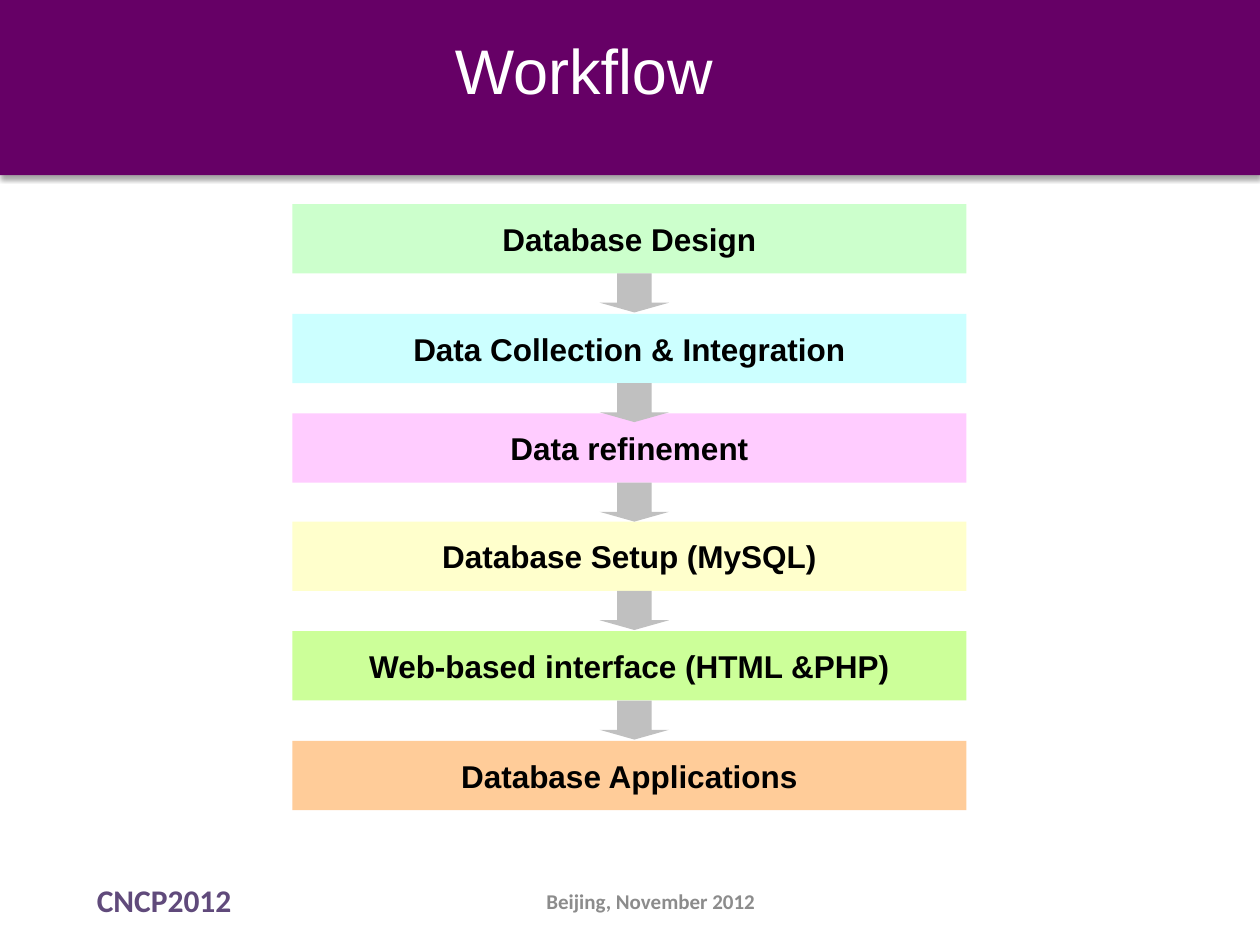
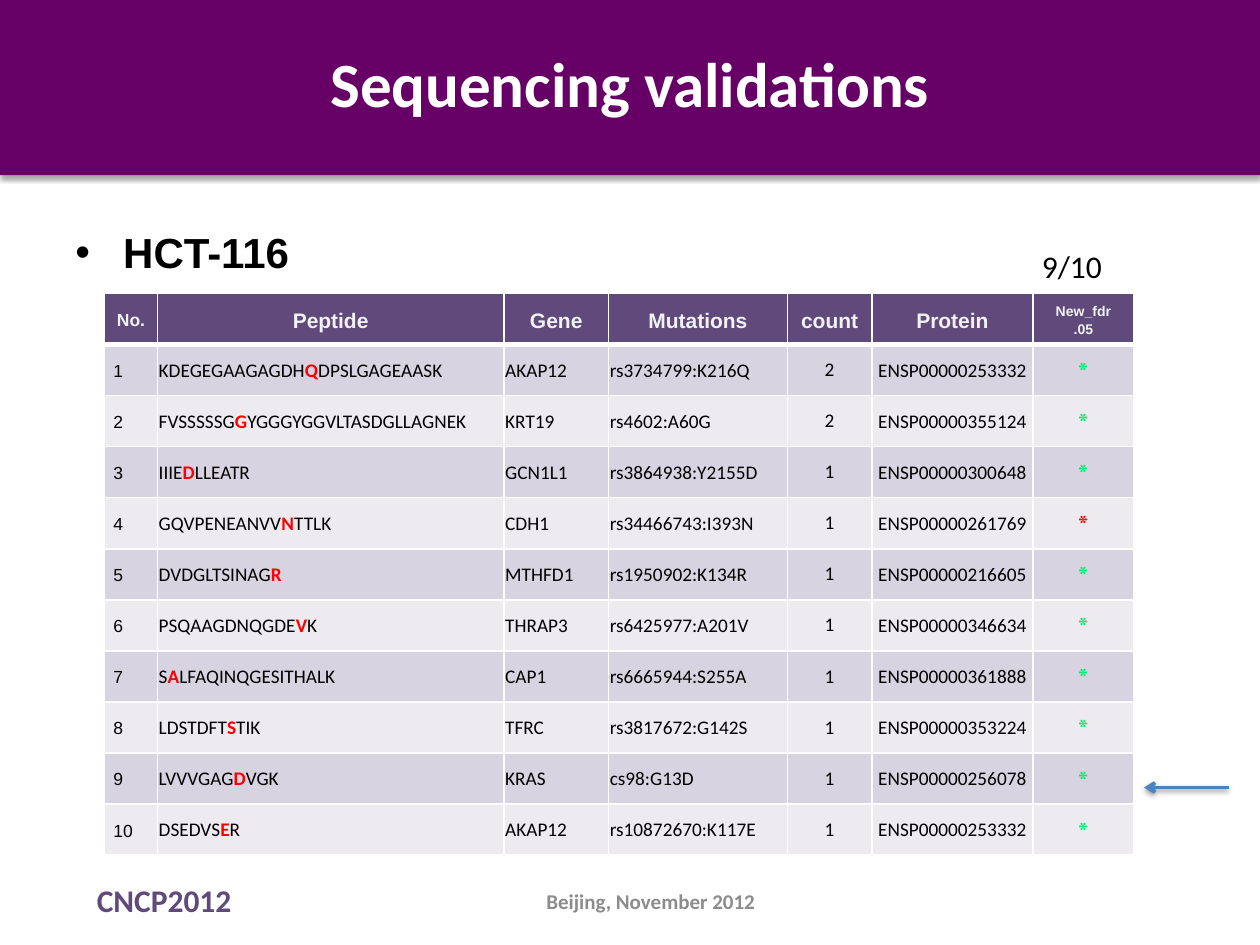
from dataclasses import dataclass

from lxml import etree
from pptx import Presentation
from pptx import util as u
from pptx.dml import color
from pptx.enum import shapes, text
from pptx.oxml import ns

TITLE_ONLY = 5
LEFT, CENTER = text.PP_ALIGN.LEFT, text.PP_ALIGN.CENTER
TOP, MIDDLE = text.MSO_ANCHOR.TOP, text.MSO_ANCHOR.MIDDLE


@dataclass(frozen=True)
class Theme:
    # Colours
    band: str = "660066"
    accent: str = "604A7B"
    white: str = "FFFFFF"
    black: str = "000000"
    muted: str = "8C8C8C"
    arrow: str = "C0C0C0"
    pointer: str = "4F81BD"
    header_text: str = "F2F2F2"
    row_fills: tuple = ("D8D3E0", "EDEAF0")
    step_fills: tuple = ("CCFFCC", "CCFFFF", "FFCCFF", "FFFFCC", "CCFF99", "FFCC99")
    mutated: str = "FF0000"
    passed: str = "00EA6A"
    # Fonts
    sans: str = "Arial"
    body: str = "Calibri"
    mark: str = "Cambria"
    # Type sizes
    title_size: int = 36
    bullet_size: int = 24
    label_size: int = 18
    mark_size: int = 16
    head_size: int = 12
    cell_size: int = 11
    number_size: int = 10
    small_size: int = 8


@dataclass(frozen=True)
class Type:
    """How one paragraph looks."""
    size: int
    font: str
    color: str = Theme.black
    bold: bool = False
    align: int = LEFT
    spacing: float = 1.0


def rgb(value):
    return color.RGBColor.from_string(value)


def add_xml(parent, tag, **attrs):
    return etree.SubElement(parent, ns.qn(tag), {k: str(v) for k, v in attrs.items()})


def set_shadow(sp, distance=0, alpha=0):
    """Give a shape a soft downward shadow, or none when alpha is 0."""
    spPr = sp._element.spPr
    effects = spPr.find(ns.qn("a:effectLst"))
    if effects is None:
        effects = add_xml(spPr, "a:effectLst")
    if alpha:
        shadow = add_xml(effects, "a:outerShdw", blurRad=u.Pt(3.1), dist=u.Pt(distance),
                         dir=90 * 60000, algn="ctr", rotWithShape=0)
        clr = add_xml(shadow, "a:srgbClr", val=Theme.black)
        add_xml(clr, "a:alpha", val=alpha * 1000)


class Deck:
    def __init__(self, theme):
        self.t = theme
        self.prs = Presentation()
        self.prs.slide_width, self.prs.slide_height = u.Inches(10), u.Inches(7.5)
        self.s = None

    def slide(self, title, box, style):
        """Start a slide with its band, title and footers."""
        t = self.t
        self.s = self.prs.slides.add_slide(self.prs.slide_layouts[TITLE_ONLY])
        sp = self.s.shapes.title
        sp.left, sp.top, sp.width, sp.height = map(u.Inches, box)
        self.put_text(sp.text_frame, [title], style)
        band = self.shape(shapes.MSO_SHAPE.RECTANGLE, (0, 0, 10, 1.39), t.band)
        set_shadow(band, 1.8, 35)
        sp._element.addprevious(band._element)
        self.label("CNCP2012", (0.67, 6.94, 2.33, 0.4),
                   Type(t.label_size, t.body, t.accent, True))
        self.label("Beijing, November 2012", (3.58, 6.95, 3.17, 0.4),
                   Type(t.head_size, t.body, t.muted, True, CENTER), MIDDLE)

    def put_text(self, tf, lines, style, anchor=TOP, wrap=True):
        """Fill a text frame; a part between bars shows as a mutated residue."""
        tf.word_wrap, tf.vertical_anchor = wrap, anchor
        for i, line in enumerate(lines):
            p = tf.add_paragraph() if i else tf.paragraphs[0]
            p.alignment, p.line_spacing = style.align, style.spacing
            p.font.size, p.font.name = u.Pt(style.size), style.font
            p.font.bold, p.font.color.rgb = style.bold, rgb(style.color)
            for j, part in enumerate(line.split("|")):
                if part:
                    r = p.add_run()
                    r.text = part
                    if j % 2:
                        r.font.bold, r.font.color.rgb = True, rgb(self.t.mutated)

    def label(self, words, box, style, anchor=TOP, wrap=True):
        sp = self.s.shapes.add_textbox(*map(u.Inches, box))
        self.put_text(sp.text_frame, [words], style, anchor, wrap)

    def bullet(self, words, box, style):
        sp = self.s.shapes.add_textbox(*map(u.Inches, box))
        pPr = sp.text_frame.paragraphs[0]._p.get_or_add_pPr()
        pPr.set("marL", str(u.Inches(0.38)))
        pPr.set("indent", str(u.Inches(-0.38)))
        add_xml(pPr, "a:buFont", typeface=self.t.sans)
        add_xml(pPr, "a:buChar", char="•")
        self.put_text(sp.text_frame, [words], style)

    def shape(self, kind, box, fill):
        sp = self.s.shapes.add_shape(kind, *map(u.Inches, box))
        sp.shadow.inherit = False
        sp.fill.solid()
        sp.fill.fore_color.rgb = rgb(fill)
        sp.line.fill.background()
        return sp

    def step(self, words, box, fill):
        sp = self.shape(shapes.MSO_SHAPE.RECTANGLE, box, fill)
        style = Type(self.t.label_size, self.t.sans, bold=True, align=CENTER)
        self.put_text(sp.text_frame, [words], style, MIDDLE, False)

    def down_arrow(self, box):
        sp = self.shape(shapes.MSO_SHAPE.DOWN_ARROW, box, self.t.arrow)
        sp.adjustments[0], sp.adjustments[1] = 0.5, 0.25

    def pointer(self, *ends):
        sp = self.s.shapes.add_connector(shapes.MSO_CONNECTOR.STRAIGHT, *map(u.Inches, ends))
        sp.line.color.rgb, sp.line.width = rgb(self.t.pointer), u.Pt(2)
        add_xml(sp._element.spPr.find(ns.qn("a:ln")), "a:tailEnd", type="arrow")
        set_shadow(sp, 1.6, 38)

    def table(self, row_count, origin, widths, height):
        frame = self.s.shapes.add_table(row_count, len(widths), *map(u.Inches, origin),
                                        u.Inches(sum(widths)), u.Inches(height))
        table = frame.table
        table.horz_banding = False
        for column, width in zip(table.columns, widths):
            column.width = u.Inches(width)
        for row in table.rows:
            row.height = u.Inches(height / row_count)
        return table

    def cell(self, cell, lines, style, fill, margins, bottom=1):
        (cell.margin_left, cell.margin_top,
         cell.margin_right, cell.margin_bottom) = map(u.Inches, margins)
        self.put_text(cell.text_frame, lines, style)
        cell.vertical_anchor = MIDDLE
        tcPr = cell._tc.get_or_add_tcPr()
        for side, width in (("L", 1), ("R", 1), ("T", 1), ("B", bottom)):
            border = add_xml(tcPr, f"a:ln{side}", w=u.Pt(width))
            add_xml(add_xml(border, "a:solidFill"), "a:srgbClr", val=self.t.white)
        cell.fill.solid()
        cell.fill.fore_color.rgb = rgb(fill)


STEPS = [  # label, top
    ("Database Design", 1.62),
    ("Data Collection & Integration", 2.49),
    ("Data refinement", 3.28),
    ("Database Setup (MySQL)", 4.14),
    ("Web-based interface (HTML &PHP)", 5.01),
    ("Database Applications", 5.88),
]

HEADERS = ["No.", "Peptide", "Gene", "Mutations", "count", "Protein", "New_fdr\n.05"]
WIDTHS = [0.42, 2.75, 0.83, 1.42, 0.67, 1.28, 0.8]
PEPTIDES = [  # peptide, gene, mutation, count, protein
    ("KDEGEGAAGAGDH|Q|DPSLGAGEAASK", "AKAP12", "rs3734799:K216Q", "2", "ENSP00000253332"),
    ("FVSSSSSG|G|YGGGYGGVLTASDGLLAGNEK", "KRT19", "rs4602:A60G", "2", "ENSP00000355124"),
    ("IIIE|D|LLEATR", "GCN1L1", "rs3864938:Y2155D", "1", "ENSP00000300648"),
    ("GQVPENEANVV|N|TTLK", "CDH1", "rs34466743:I393N", "1", "ENSP00000261769"),
    ("DVDGLTSINAG|R|", "MTHFD1", "rs1950902:K134R", "1", "ENSP00000216605"),
    ("PSQAAGDNQGDE|V|K", "THRAP3", "rs6425977:A201V", "1", "ENSP00000346634"),
    ("S|A|LFAQINQGESITHALK", "CAP1", "rs6665944:S255A", "1", "ENSP00000361888"),
    ("LDSTDFT|S|TIK", "TFRC", "rs3817672:G142S", "1", "ENSP00000353224"),
    ("LVVVGAG|D|VGK", "KRAS", "cs98:G13D", "1", "ENSP00000256078"),
    ("DSEDVS|E|R", "AKAP12", "rs10872670:K117E", "1", "ENSP00000253332"),
]
FAILED_ROW = 4


def workflow(deck):
    t = deck.t
    deck.slide("Workflow", (3.51, 0.2, 3.95, 1.25), Type(t.title_size, t.sans, t.white))
    step_height = 0.55
    for (words, top), fill in zip(STEPS, t.step_fills):
        deck.step(words, (2.32, top, 5.35, step_height), fill)
    for _, top in STEPS[:-1]:
        deck.down_arrow((4.76, top + step_height, 0.55, 0.31))


def validations(deck):
    t = deck.t
    deck.slide("Sequencing validations", (0.5, 0.3, 9, 1.25),
               Type(t.title_size, t.body, t.white, True, CENTER))
    deck.bullet("HCT-116", (0.5, 1.75, 9, 4.95), Type(t.bullet_size, t.sans, bold=True))

    # Peptide table: header row
    table = deck.table(len(PEPTIDES) + 1, (0.83, 2.33), WIDTHS, 4.46)
    wide, tight, normal = (0.07, 0, 0.07, 0), (0.01, 0.01, 0.01, 0), (0.1, 0.05, 0.1, 0.05)
    head_sizes = [t.number_size] + [t.head_size] * 5 + [t.small_size]
    for c, (header, size) in enumerate(zip(HEADERS, head_sizes)):
        deck.cell(table.cell(0, c), header.split("\n"),
                  Type(size, t.sans, t.header_text, True, CENTER, 1.15), t.accent, wide, 3)

    # Peptide table: one row for each peptide
    number = Type(t.number_size, t.sans, spacing=1.15)
    plain = Type(t.cell_size, t.body)
    centered = Type(t.cell_size, t.body, align=CENTER)
    columns = [(number, wide), (plain, tight), (plain, tight), (plain, tight),
               (centered, normal), (centered, tight)]
    for n, peptide in enumerate(PEPTIDES, 1):
        verdict = t.mutated if n == FAILED_ROW else t.passed
        mark = Type(t.mark_size, t.mark, verdict, True, CENTER, 1.15)
        fill = t.row_fills[(n - 1) % 2]
        formats = columns + [(mark, wide)]
        for c, (words, (style, margins)) in enumerate(zip((str(n), *peptide, "*"), formats)):
            deck.cell(table.cell(n, c), [words], style, fill, margins)

    # Score and pointer to the KRAS row
    deck.label("9/10", (8.17, 1.91, 0.75, 0.4), Type(t.label_size, t.body), wrap=False)
    deck.pointer(9.75, 6.25, 9.08, 6.25)


def main():
    deck = Deck(Theme())
    workflow(deck)
    validations(deck)
    deck.prs.save("out.pptx")


if __name__ == "__main__":
    main()
